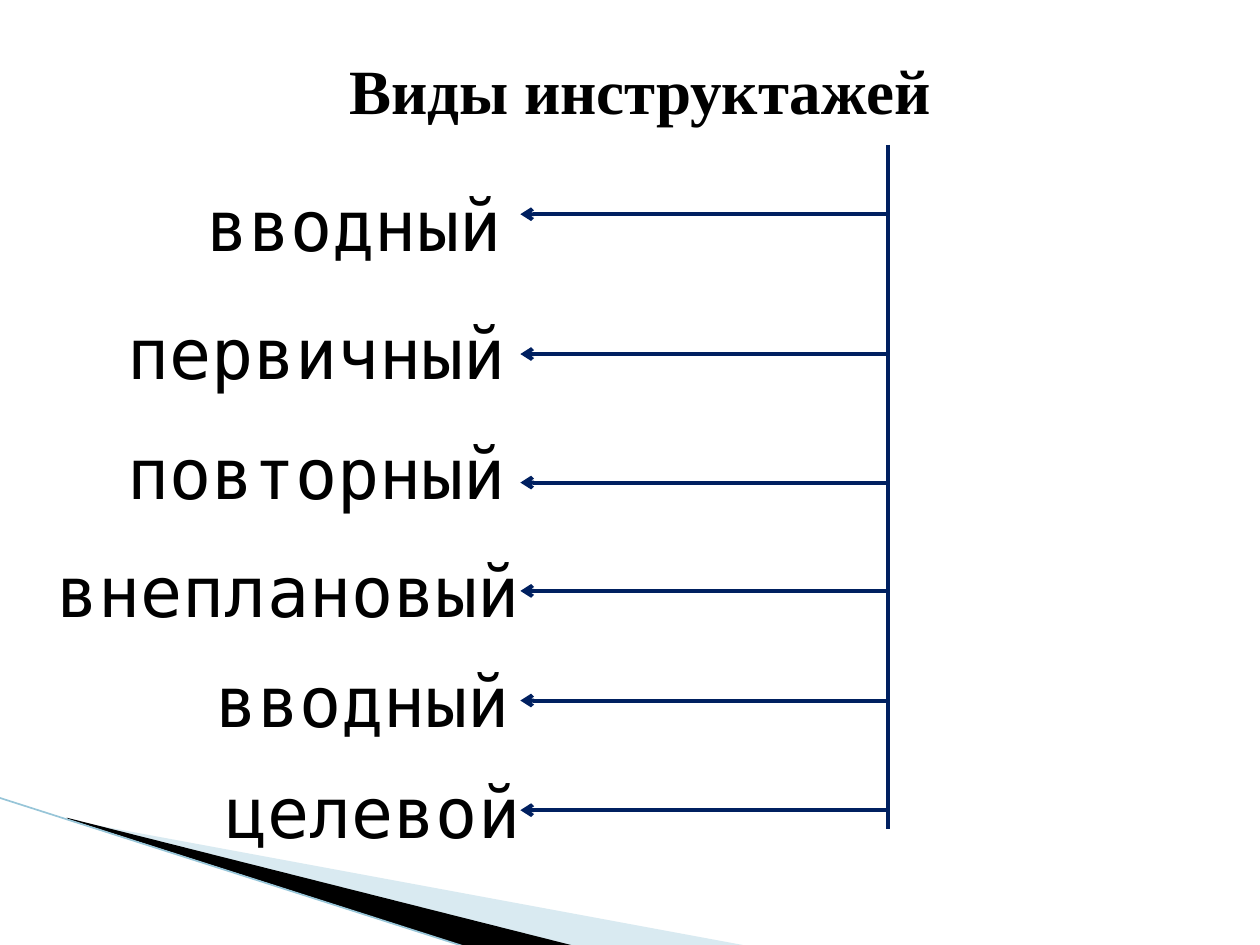
"""Build a slide that lists the kinds of safety briefing beside an arrow tree."""
from lxml import etree
from pptx import Presentation
from pptx.dml.color import RGBColor
from pptx.enum.shapes import MSO_CONNECTOR
from pptx.enum.text import MSO_ANCHOR, PP_ALIGN
from pptx.oxml.ns import qn
from pptx.util import Inches, Pt

STRAIGHT = MSO_CONNECTOR.STRAIGHT
TOP = MSO_ANCHOR.TOP
LEFT, CENTER = PP_ALIGN.LEFT, PP_ALIGN.CENTER

BLACK = RGBColor(0x00, 0x00, 0x00)
NAVY = RGBColor(0x00, 0x20, 0x60)
PALE_BLUE = RGBColor(0xA0, 0xCB, 0xDC)
EDGE_BLUE = RGBColor(0x97, 0xC5, 0xD8)

TITLE_FONT = "Times New Roman"
LABEL_FONT = "DejaVu Sans Mono"

COLUMNS, ROWS = 100, 75
UNIT = Inches(10) // COLUMNS

TRUNK, TRUNK_TOP, TRUNK_BOTTOM = 70.5, 11.5, 65.8
ARROW_TIP = 41.3
LABEL_WIDTH, LABEL_HEIGHT = 40.9, 7.7
BRIEFINGS = [
    ("вводный", 15.4, 13.9, 17),
    ("первичный", 9.1, 24.1, 28.1),
    ("повторный", 9.1, 33.6, 38.3),
    ("внеплановый", 3.5, 43, 46.9),
    ("вводный", 16.1, 51.7, 55.6),
    ("целевой", 16.9, 60.5, 64.3),
]
PALE_WEDGE = [(5.5, 65.1), (59.5, 75.1), (45.6, 75.1), (5.5, 65)]
BLACK_WEDGE = [(5.3, 64.9), (45.7, 75.1), (37.2, 75.2), (5.4, 65)]


def grid(*cells):
    """Turn grid columns or rows into slide lengths."""
    return [round(cell * UNIT) for cell in cells]


def write_text(shape, text, size, font_name, bold=False, alignment=LEFT):
    """Put one formatted paragraph at the top of a shape."""
    frame = shape.text_frame
    frame.word_wrap = True
    frame.vertical_anchor = TOP
    frame.text = text
    paragraph = frame.paragraphs[0]
    paragraph.alignment = alignment
    font = paragraph.font
    font.name, font.size, font.bold = font_name, Pt(size), bold
    font.color.rgb = BLACK


def add_title(slide, text):
    """Move and fill the title placeholder."""
    title = slide.shapes.title
    title.left, title.top, title.width, title.height = grid(8.3, 3.6, 85, 13.1)
    write_text(title, text, 36, TITLE_FONT, bold=True, alignment=CENTER)


def add_label(slide, text, left, top):
    """Add the name of one briefing."""
    box = slide.shapes.add_textbox(*grid(left, top, LABEL_WIDTH, LABEL_HEIGHT))
    write_text(box, text, 40, LABEL_FONT)


def add_line(slide, start, end, color=NAVY, width=2.25, arrow=False):
    """Draw a straight line, with an arrowhead at its end if asked."""
    line = slide.shapes.add_connector(STRAIGHT, *grid(*start, *end))
    line.line.color.rgb = color
    line.line.width = Pt(width)
    if arrow:
        etree.SubElement(line.line._get_or_add_ln(), qn("a:tailEnd"), type="arrow")
    etree.SubElement(line._element.spPr, qn("a:effectLst"))


def add_wedge(slide, points, color, opacity=100):
    """Draw a filled corner wedge through grid points."""
    start, *others = [grid(*point) for point in points]
    builder = slide.shapes.build_freeform(*start)
    builder.add_line_segments(others, close=True)
    wedge = builder.convert_to_shape()
    wedge.shadow.inherit = False
    wedge.line.fill.background()
    wedge.fill.solid()
    wedge.fill.fore_color.rgb = color
    if opacity < 100:
        fill_color = wedge._element.spPr.find(".//" + qn("a:srgbClr"))
        etree.SubElement(fill_color, qn("a:alpha"), val=str(opacity * 1000))


def main():
    """Build and save the slide."""
    presentation = Presentation()
    presentation.slide_width, presentation.slide_height = grid(COLUMNS, ROWS)
    slide = presentation.slides.add_slide(presentation.slide_layouts[5])
    add_wedge(slide, PALE_WEDGE, PALE_BLUE, opacity=40)
    add_wedge(slide, BLACK_WEDGE, BLACK)
    add_line(slide, (-0.1, 63.3), (37.1, 75.2), EDGE_BLUE, 0.95)
    add_title(slide, "Виды инструктажей")
    add_line(slide, (TRUNK, TRUNK_TOP), (TRUNK, TRUNK_BOTTOM))
    for text, left, top, arrow_row in BRIEFINGS:
        add_label(slide, text, left, top)
        add_line(slide, (TRUNK, arrow_row), (ARROW_TIP, arrow_row), arrow=True)
    presentation.save("out.pptx")


if __name__ == "__main__":
    main()
